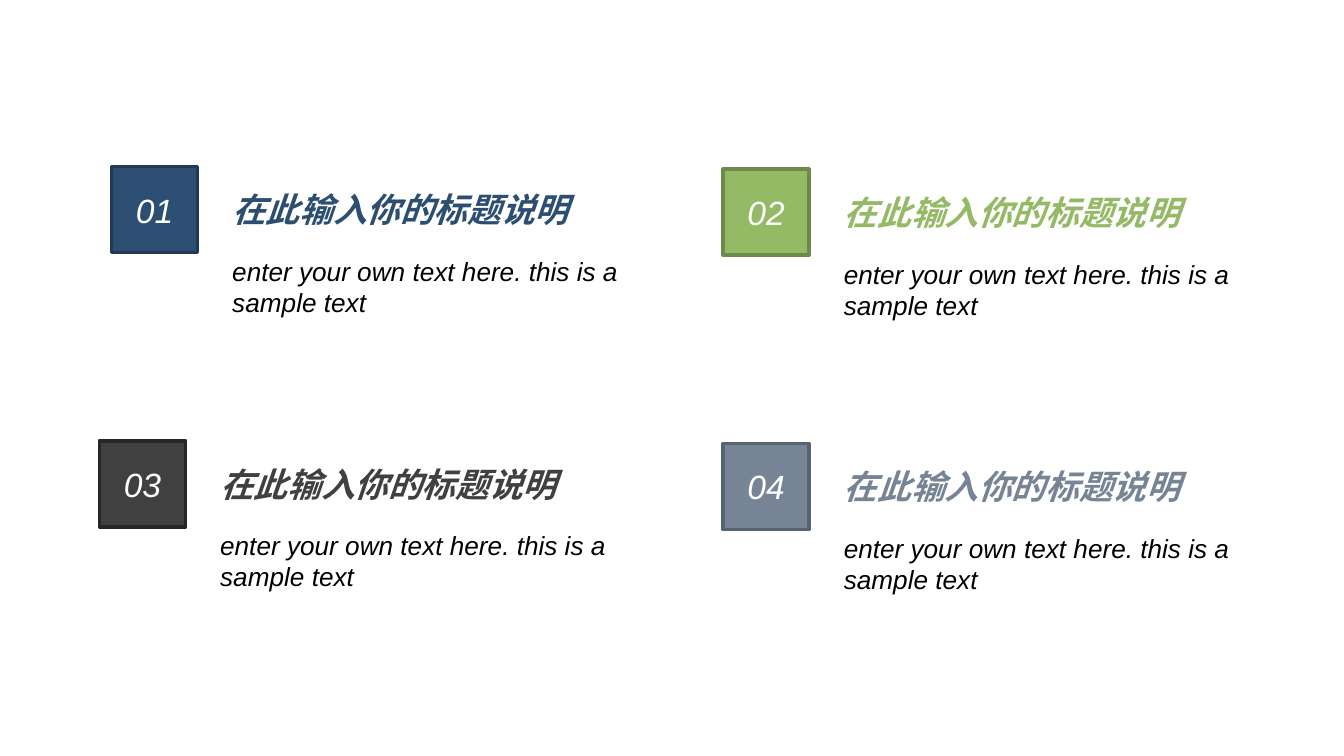
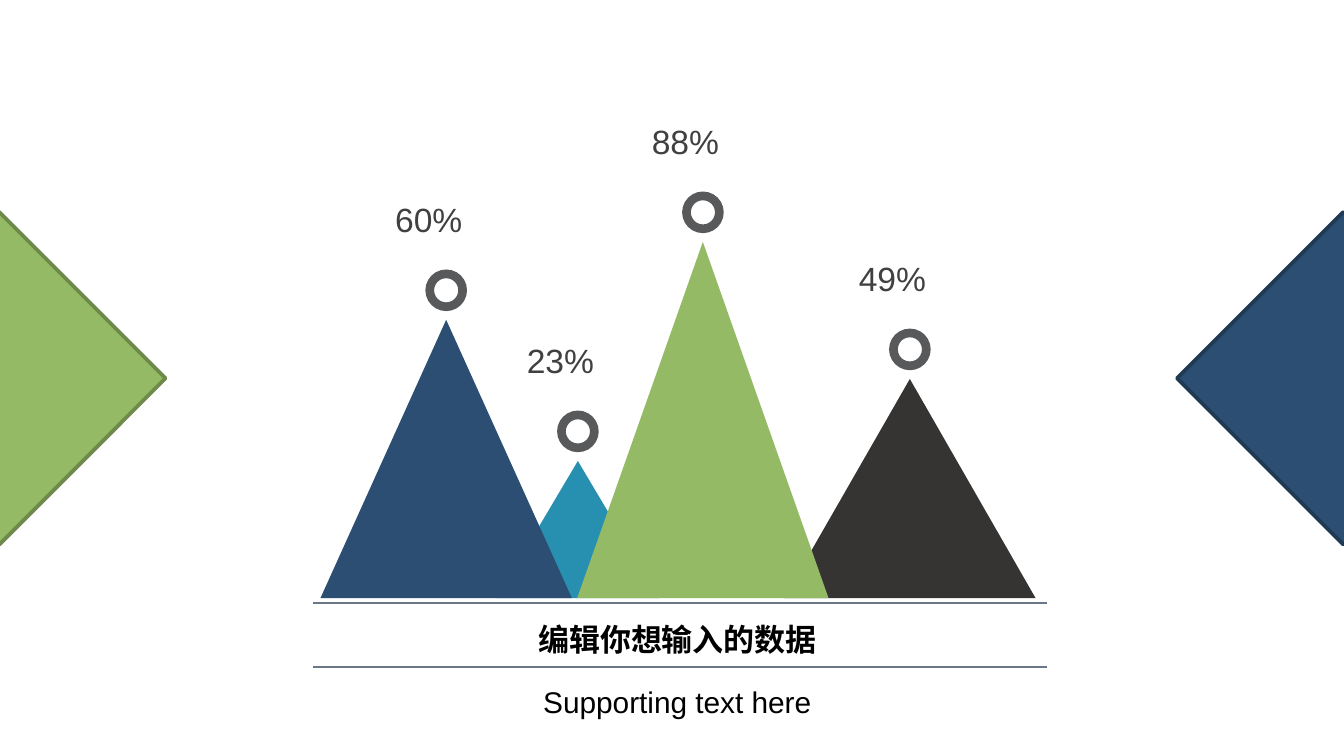
from pptx import Presentation
from pptx.dml.color import RGBColor
from pptx.enum.shapes import MSO_CONNECTOR, MSO_SHAPE
from pptx.enum.text import MSO_ANCHOR, PP_ALIGN
from pptx.util import Inches, Pt
from lxml import etree

FONT = "Arial"
BLACK, WHITE = "000000", "FFFFFF"
NAVY, NAVY_EDGE = "2B4E72", "203A54"
GREEN, GREEN_EDGE = "94BA65", "6D8A4B"
CHARCOAL, CHARCOAL_EDGE = "404040", "262626"
SLATE, SLATE_EDGE = "778495", "586371"
TEAL, COAL, RING_GRAY, RULE_GRAY = "2790B0", "353432", "58595B", "6A7788"

# Slide 1: number, fill, edge, left, top
ITEM_TITLE = "在此输入你的标题说明"
ITEM_BODY = "enter your own text here. this is a sample text"
ITEMS = [
    ("01", NAVY, NAVY_EDGE, 0.83, 1.24),
    ("02", GREEN, GREEN_EDGE, 5.38, 1.26),
    ("03", CHARCOAL, CHARCOAL_EDGE, 0.74, 3.28),
    ("04", SLATE, SLATE_EDGE, 5.38, 3.3),
]

# Slide 2: label, colour, centre, top, width; back to front
PEAKS = [
    ("23%", TEAL, 4.3, 3.43, 1.21),
    ("49%", COAL, 6.77, 2.82, 1.87),
    ("60%", NAVY, 3.32, 2.38, 1.87),
    ("88%", GREEN, 5.23, 1.8, 1.87),
]
BASELINE = 4.45
CAPTION = "编辑你想输入的数据"
SUPPORT = "Supporting text here"
RULES = (4.49, 4.96)
CORNERS = [(-0.88, GREEN, GREEN_EDGE), (9.12, NAVY, NAVY_EDGE)]


def color(value):
    return RGBColor.from_string(value)


def box(left, top, width, height):
    return [Inches(value) for value in (left, top, width, height)]


def write(shape, text, size, ink, bold=False, italic=False,
          align=PP_ALIGN.LEFT, anchor=MSO_ANCHOR.TOP):
    frame = shape.text_frame
    frame.word_wrap = True
    frame.vertical_anchor = anchor
    paragraph = frame.paragraphs[0]
    paragraph.text = text
    paragraph.alignment = align
    font = paragraph.font
    font.name, font.size = FONT, Pt(size)
    font.bold, font.italic = bold, italic
    font.color.rgb = color(ink)


def add_text(slide, place, text, size, ink, **style):
    shape = slide.shapes.add_textbox(*box(*place))
    write(shape, text, size, ink, **style)
    return shape


def add_block(slide, kind, place, fill, edge=None):
    shape = slide.shapes.add_shape(kind, *box(*place))
    shape.shadow.inherit = False
    shape.fill.solid()
    shape.fill.fore_color.rgb = color(fill)
    if edge:
        shape.line.color.rgb = color(edge)
        shape.line.width = Pt(2)
    else:
        shape.line.fill.background()
    return shape


def add_rule(slide, left, right, top):
    rule = slide.shapes.add_connector(
        MSO_CONNECTOR.STRAIGHT, Inches(left), Inches(top), Inches(right), Inches(top))
    rule.line.color.rgb = color(RULE_GRAY)
    rule.line.width = Pt(1)
    properties = rule._element.spPr
    etree.SubElement(properties, "{%s}effectLst" % properties.nsmap["a"])


def build_items(slide):
    for number, fill, edge, left, top in ITEMS:
        square = add_block(slide, MSO_SHAPE.RECTANGLE, (left, top, 0.64, 0.64), fill, edge)
        write(square, number, 18, WHITE, italic=True,
              align=PP_ALIGN.CENTER, anchor=MSO_ANCHOR.MIDDLE)
        text_left = left + 0.8
        add_text(slide, (text_left, top + 0.12, 2.99, 0.4), ITEM_TITLE, 18, fill,
                 bold=True, italic=True)
        add_text(slide, (text_left, top + 0.61, 3.46, 0.57), ITEM_BODY, 14, BLACK,
                 italic=True)


def build_peaks(slide):
    # Triangles with a ring and a label above each tip
    for label, fill, center, top, width in PEAKS:
        add_block(slide, MSO_SHAPE.ISOSCELES_TRIANGLE,
                  (center - width / 2, top, width, BASELINE - top), fill)
        ring = add_block(slide, MSO_SHAPE.DONUT,
                         (center - 0.155, top - 0.375, 0.31, 0.31), RING_GRAY)
        ring.adjustments[0] = 0.21
        text = add_text(slide, (center - 0.38, top - 0.9, 0.76, 0.4), label, 18, CHARCOAL)
        frame = text.text_frame
        frame.margin_left = frame.margin_right = frame.margin_top = frame.margin_bottom = 0

    # Caption between two rules
    add_text(slide, (2.38, 5.04, 5.32, 0.39), SUPPORT, 16, BLACK, align=PP_ALIGN.CENTER)
    add_text(slide, (2.38, 4.57, 5.32, 0.37), CAPTION, 16.6, BLACK, bold=True,
             align=PP_ALIGN.CENTER, anchor=MSO_ANCHOR.MIDDLE)
    for top in RULES:
        add_rule(slide, 2.33, 7.79, top)

    # Turned squares at the slide edges
    for left, fill, edge in CORNERS:
        square = add_block(slide, MSO_SHAPE.RECTANGLE, (left, 1.94, 1.75, 1.75), fill, edge)
        square.rotation = 45


def main():
    presentation = Presentation()
    presentation.slide_width = Inches(10)
    presentation.slide_height = presentation.slide_width * 9 // 16
    for build in (build_items, build_peaks):
        build(presentation.slides.add_slide(presentation.slide_layouts[6]))
    presentation.save("out.pptx")


if __name__ == "__main__":
    main()
